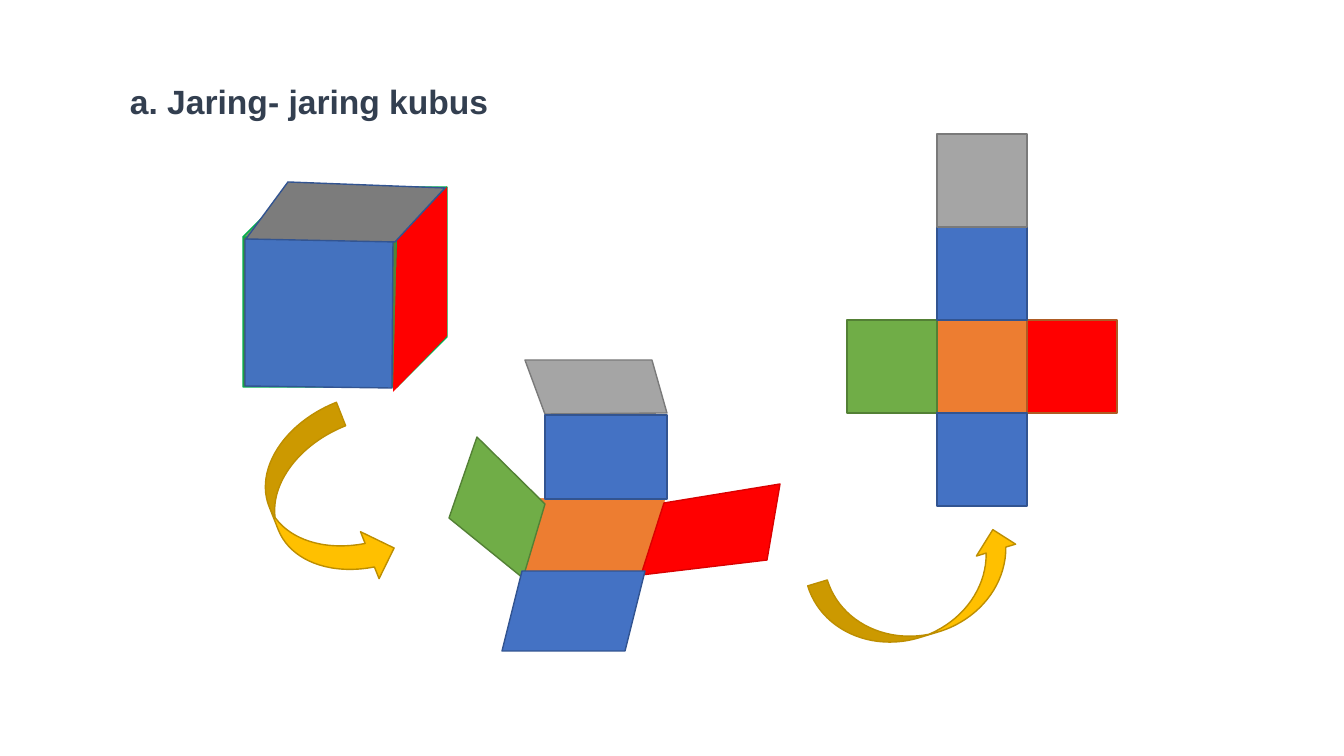
from lxml import etree
from pptx import Presentation
from pptx.dml.color import RGBColor
from pptx.enum import shapes, text
from pptx.oxml import ns
from pptx.util import Emu, Pt

PX = 914400 / 100.8  # EMU in one px

INK = RGBColor(0x33, 0x3F, 0x50)
BLUE, NAVY = RGBColor(0x44, 0x72, 0xC4), RGBColor(0x32, 0x54, 0x91)
GREEN, MOSS = RGBColor(0x70, 0xAD, 0x47), RGBColor(0x53, 0x80, 0x35)
FOREST, EMERALD = RGBColor(0x54, 0x82, 0x35), RGBColor(0x00, 0xB0, 0x50)
RED, CRIMSON = RGBColor(0xFF, 0x00, 0x00), RGBColor(0xDA, 0x00, 0x00)
ORANGE, RUST = RGBColor(0xED, 0x7D, 0x31), RGBColor(0xAF, 0x5C, 0x24)
GREY, SLATE = RGBColor(0xA5, 0xA5, 0xA5), RGBColor(0x7A, 0x7A, 0x7A)
DARK_GREY = RGBColor(0x7C, 0x7C, 0x7C)
GOLD, BRONZE = RGBColor(0xFF, 0xC0, 0x00), RGBColor(0xBD, 0x8E, 0x00)
WHITE = RGBColor(0xFF, 0xFF, 0xFF)

# Content
TITLE = "a. Jaring- jaring kubus"
TITLE_BOX = (120, 76, 482, 50)

CUBE_BOX = (243, 187, 204, 200)
CUBE_FACES = [  # corners, fill, line, opacity in percent
    ([(393, 392), (397, 240), (447, 187), (447, 336)], RED, None, 100),
    ([(245, 239), (245, 386), (392, 388), (393, 239)], BLUE, NAVY, 97),
    ([(246, 239), (288, 182), (445, 188), (395, 242)], DARK_GREY, NAVY, 100),
]

# Half-opened net: a box is a parallelogram, a list of corners is a free face
FOLDING_FACES = [  # box or corners, fill, line, line width, slant
    ((520, 497, 147, 77), ORANGE, WHITE, 1.5, 0.25),
    ([(667, 413), (652, 360), (525, 360), (545, 414)], GREY, SLATE, 1, None),
    ((545, 415, 122, 84), BLUE, NAVY, 1, 0),
    ([(641, 575), (664, 503), (780, 484), (767, 560)], RED, CRIMSON, 1, None),
    ([(545, 504), (477, 437), (449, 518), (523, 578)], GREEN, MOSS, 1, None),
    ((502, 571, 143, 80), BLUE, NAVY, 1, 0.25),
]

NET_LEFT, NET_TOP, TILE_W, TILE_H = 847, 134, 90, 93
NET_TILES = [  # column, row, fill, line
    (1, 2, ORANGE, RUST),
    (0, 2, GREEN, MOSS),
    (2, 2, RED, RUST),
    (1, 3, BLUE, NAVY),
    (1, 1, BLUE, NAVY),
    (1, 0, GREY, SLATE),
]

ARROWS = [  # box, rotation
    ((815, 553, 214, 82), 163.1),
    ((232, 455, 182, 101), 248.4),
]

deck = Presentation()
deck.slide_width, deck.slide_height = Emu(round(1344 * PX)), Emu(round(756 * PX))
slide = deck.slides.add_slide(deck.slide_layouts[6])


def emu(box):
    return [Emu(round(length * PX)) for length in box]


def paint(face, fill, line, width=1):
    face.shadow.inherit = False
    face.fill.solid()
    face.fill.fore_color.rgb = fill
    if line is None:
        face.line.fill.background()
    else:
        face.line.color.rgb = line
        face.line.width = Pt(width)
    return face


def add_preset(kind, box, fill, line, width=1):
    return paint(slide.shapes.add_shape(kind, *emu(box)), fill, line, width)


def add_polygon(corners, fill, line, width=1):
    outline = slide.shapes.build_freeform(*corners[0], scale=PX)
    outline.add_line_segments(corners[1:], close=True)
    return paint(outline.convert_to_shape(), fill, line, width)


# Title
title = slide.shapes.add_textbox(*emu(TITLE_BOX)).text_frame
title.word_wrap = True
title.auto_size = text.MSO_AUTO_SIZE.SHAPE_TO_FIT_TEXT
heading = title.paragraphs[0]
heading.text = TITLE
heading.font.name, heading.font.size, heading.font.bold = "Arial", Pt(24), True
heading.font.color.rgb = INK

# Closed cube with coloured faces
add_preset(shapes.MSO_SHAPE.CUBE, CUBE_BOX, FOREST, EMERALD)
for corners, fill, line, opacity in CUBE_FACES:
    face = add_polygon(corners, fill, line)
    if opacity < 100:
        colour = face.fill._xPr.find(ns.qn("a:solidFill"))[0]
        etree.SubElement(colour, ns.qn("a:alpha"), val=str(opacity * 1000))

# Cube unfolding
for outline, fill, line, width, slant in FOLDING_FACES:
    if slant is None:
        add_polygon(outline, fill, line, width)
    else:
        flap = add_preset(shapes.MSO_SHAPE.PARALLELOGRAM, outline, fill, line, width)
        flap.adjustments[0] = slant

# Flat net
for column, row, fill, line in NET_TILES:
    box = (NET_LEFT + column * TILE_W, NET_TOP + row * TILE_H, TILE_W, TILE_H)
    add_preset(shapes.MSO_SHAPE.RECTANGLE, box, fill, line)

# Arrows from one stage to the next
for box, rotation in ARROWS:
    arrow = add_preset(shapes.MSO_SHAPE.CURVED_DOWN_ARROW, box, GOLD, BRONZE)
    arrow.rotation = rotation
    arrow._element.spPr.find(ns.qn("a:xfrm")).set("flipH", "1")

deck.save("out.pptx")
